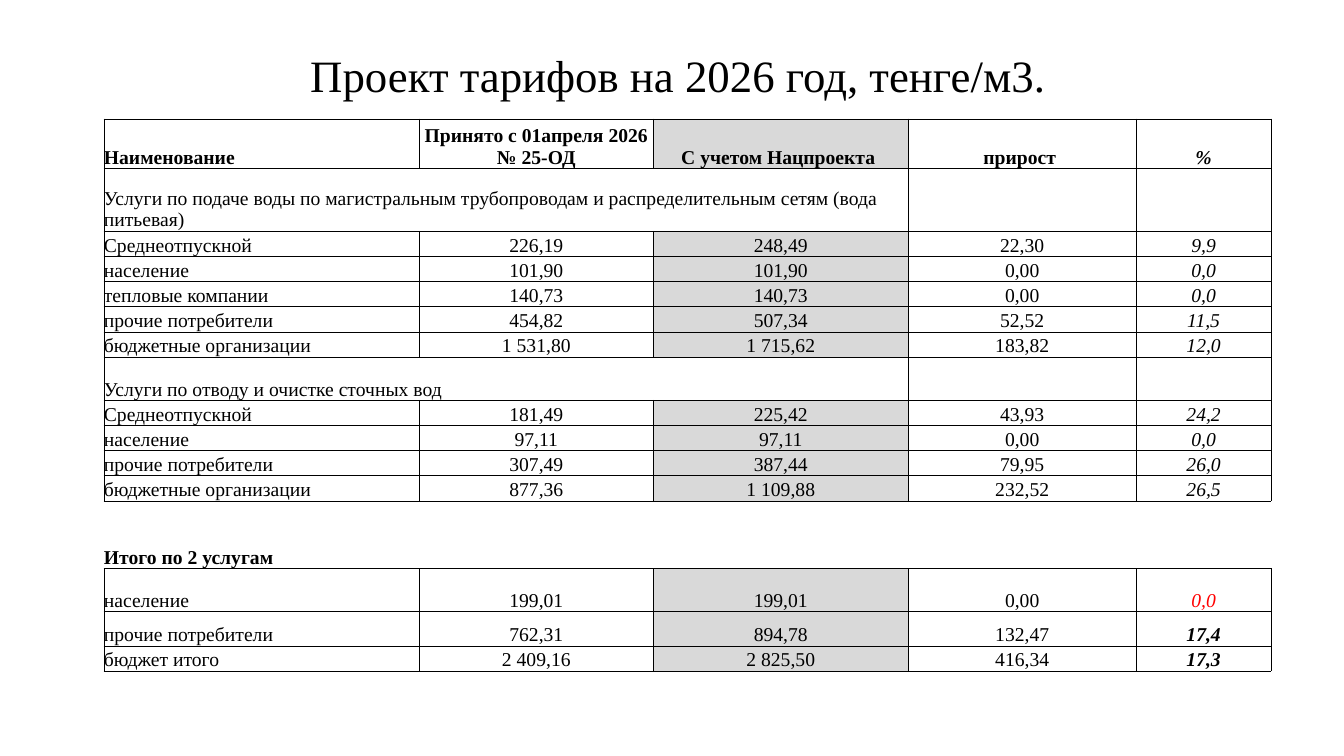
import dataclasses
import enum

import pptx
import pptx.dml.color
import pptx.enum.text
import pptx.oxml
import pptx.oxml.ns
import pptx.table
import pptx.text.text
import pptx.util

SLIDE_WIDTH = pptx.util.Inches(13.33)
SLIDE_HEIGHT = pptx.util.Inches(7.5)
FONT_NAME = "Times New Roman"
COLORS = {"text": "000000", "plain": "FFFFFF", "project": "D9D9D9", "alert": "FF0000"}

# Shares of the slide, in percent
LEFT = 7.73
TITLE_TOP, TITLE_WIDTH, TITLE_HEIGHT = 5.33, 85.45, 9.87
TABLE_TOP = 15.73
COLUMN_SHARES = (23.48, 17.4, 18.98, 16.95, 10.05)
LINE_ROW = 3.33
PROJECT_COLUMN, PERCENT_COLUMN = 2, 4


class Kind(enum.Enum):
    HEADER = "header"
    SECTION = "section"
    TARIFF = "tariff"
    TOTAL_HEADING = "total heading"
    TOTAL = "total"


@dataclasses.dataclass(frozen=True)
class TariffRow:
    texts: tuple[str, ...]
    kind: Kind = Kind.TARIFF
    height: float = LINE_ROW
    percent_color: str = "text"


ROWS = (
    TariffRow(("Наименование", "Принято c 01апреля 2026 № 25-ОД", "С учетом Нацпроекта ",
               "прирост ", "%"), Kind.HEADER, 6.53),
    TariffRow(("Услуги по подаче воды по магистральным трубопроводам и "
               "распределительным сетям (вода питьевая)",), Kind.SECTION, 8.33),
    TariffRow(("Среднеотпускной", "226,19", "248,49", "22,30", "9,9")),
    TariffRow(("население", "101,90", "101,90", "0,00", "0,0")),
    TariffRow(("тепловые компании", "140,73", "140,73", "0,00", "0,0")),
    TariffRow(("прочие потребители", "454,82", "507,34", "52,52", "11,5")),
    TariffRow(("бюджетные организации", "1 531,80", "1 715,62", "183,82", "12,0")),
    TariffRow(("Услуги по отводу и очистке сточных вод",), Kind.SECTION, 5.73),
    TariffRow(("Среднеотпускной", "181,49", "225,42", "43,93", "24,2")),
    TariffRow(("население", "97,11", "97,11", "0,00", "0,0")),
    TariffRow(("прочие потребители", "307,49", "387,44", "79,95", "26,0")),
    TariffRow(("бюджетные организации", "877,36", "1 109,88", "232,52", "26,5")),
    TariffRow(("Итого по 2 услугам",), Kind.TOTAL_HEADING, 8.93),
    TariffRow(("население", "199,01", "199,01", "0,00", "0,0"), Kind.TARIFF, 5.73, "alert"),
    TariffRow(("прочие потребители", "762,31", "894,78", "132,47", "17,4"), Kind.TOTAL, 4.53),
    TariffRow(("бюджет итого", "2 409,16", "2 825,50", "416,34", "17,3"), Kind.TOTAL),
)


def across(share: float) -> int:
    return round(SLIDE_WIDTH * share / 100)


def down(share: float) -> int:
    return round(SLIDE_HEIGHT * share / 100)


def rgb(name: str) -> pptx.dml.color.RGBColor:
    return pptx.dml.color.RGBColor.from_string(COLORS[name])


def set_font(paragraph: pptx.text.text._Paragraph, size: float, color: str = "text",
             bold: bool = False, italic: bool = False) -> None:
    font = paragraph.font
    font.name, font.size = FONT_NAME, pptx.util.Pt(size)
    font.bold, font.italic = bold, italic
    font.color.rgb = rgb(color)


def set_borders(cell: pptx.table._Cell, open_sides: bool) -> None:
    properties = cell._tc.get_or_add_tcPr()
    for side in "LRTB":
        if open_sides and side in "LR":
            paint = "<a:noFill/>"
        else:
            paint = f'<a:solidFill><a:srgbClr val="{COLORS["text"]}"/></a:solidFill>'
        properties.append(pptx.oxml.parse_xml(
            f'<a:ln{side} {pptx.oxml.ns.nsdecls("a")} w="{pptx.util.Pt(0.5)}">'
            f"{paint}</a:ln{side}>"))


def fill_cell(cell: pptx.table._Cell, row: TariffRow, column: int) -> None:
    set_borders(cell, row.kind is Kind.TOTAL_HEADING)
    shaded = column == PROJECT_COLUMN and len(row.texts) > 1
    cell.fill.solid()
    cell.fill.fore_color.rgb = rgb("project" if shaded else "plain")
    cell.margin_left = cell.margin_right = cell.margin_top = cell.margin_bottom = 0
    cell.vertical_anchor = pptx.enum.text.MSO_ANCHOR.BOTTOM

    paragraph = cell.text_frame.paragraphs[0]
    if column < len(row.texts):
        paragraph.text = row.texts[column]
    if column > 0:
        paragraph.alignment = pptx.enum.text.PP_ALIGN.CENTER
    percent = column == PERCENT_COLUMN
    bold = row.kind in (Kind.HEADER, Kind.TOTAL_HEADING) or (percent and row.kind is Kind.TOTAL)
    set_font(paragraph, 14, row.percent_color if percent else "text", bold, percent)


def main() -> None:
    presentation = pptx.Presentation()
    presentation.slide_width, presentation.slide_height = SLIDE_WIDTH, SLIDE_HEIGHT
    slide = presentation.slides.add_slide(presentation.slide_layouts[6])

    # Title
    title = slide.shapes.add_textbox(across(LEFT), down(TITLE_TOP),
                                     across(TITLE_WIDTH), down(TITLE_HEIGHT))
    title.text_frame.word_wrap = True
    title.text_frame.vertical_anchor = pptx.enum.text.MSO_ANCHOR.MIDDLE
    heading = title.text_frame.paragraphs[0]
    heading.text = "Проект тарифов на 2026 год, тенге/м3."
    heading.alignment = pptx.enum.text.PP_ALIGN.CENTER
    heading.line_spacing = 0.9
    set_font(heading, 32)

    # Tariff table
    table = slide.shapes.add_table(
        len(ROWS), len(COLUMN_SHARES), across(LEFT), down(TABLE_TOP),
        across(sum(COLUMN_SHARES)), down(sum(row.height for row in ROWS))).table
    table.first_row = table.horz_banding = False
    for column, share in enumerate(COLUMN_SHARES):
        table.columns[column].width = across(share)
    for index, row in enumerate(ROWS):
        table.rows[index].height = down(row.height)
        for column in range(len(COLUMN_SHARES)):
            fill_cell(table.cell(index, column), row, column)
        if row.kind is Kind.SECTION:
            table.cell(index, 0).merge(table.cell(index, PROJECT_COLUMN))

    presentation.save("out.pptx")


if __name__ == "__main__":
    main()
